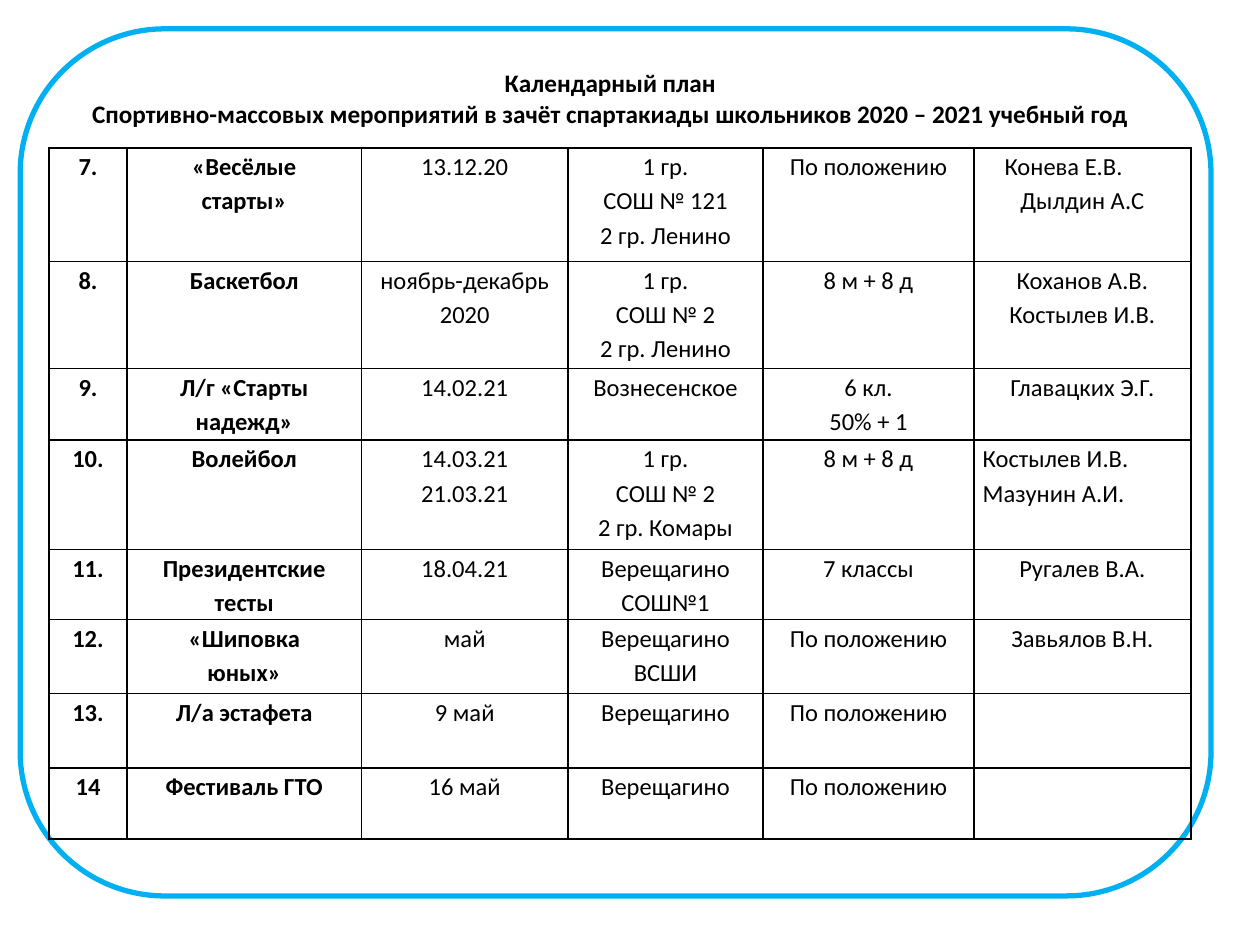
import pptx
import pptx.util
import pptx.dml.color
import pptx.enum.shapes
import pptx.enum.text
import pptx.oxml
import pptx.oxml.ns

Pt = pptx.util.Pt
RGB = pptx.dml.color.RGBColor.from_string
ALIGN = pptx.enum.text.PP_ALIGN
ANCHOR = pptx.enum.text.MSO_ANCHOR


class Theme:
    font = "Calibri"
    paper = "FFFFFF"
    ink = "000000"
    accent = "00B0F0"
    title_size = 14.4
    body_size = 14
    frame_width = 3
    border_width = 1
    line_spacing = 1.15


TITLE = ["Календарный план",
         "Спортивно-массовых мероприятий в зачёт спартакиады школьников "
         "2020 – 2021 учебный год"]
COLUMN_WIDTHS = [44.6, 134, 118, 111.5, 120.5, 124]
ROW_HEIGHTS = [65, 61, 41, 62.5, 40, 42.5, 42.5, 40.5]
BOLD_COLUMNS = (0, 1)
EVENTS = [
    ["7.", "«Весёлые\nстарты»", "13.12.20", "1 гр.\nСОШ № 121\n2 гр. Ленино",
     "По положению", "Конева Е.В.\nДылдин А.С"],
    ["8.", "Баскетбол", "ноябрь-декабрь\n2020", "1 гр.\nСОШ № 2\n2 гр. Ленино",
     "8 м + 8 д", "Коханов А.В.\nКостылев И.В."],
    ["9.", "Л/г «Старты\nнадежд»", "14.02.21", "Вознесенское",
     "6 кл.\n50% + 1", "Главацких Э.Г."],
    ["10.", "Волейбол", "14.03.21\n21.03.21", "1 гр.\nСОШ № 2\n2 гр. Комары",
     "8 м + 8 д", "Костылев И.В.\nМазунин А.И."],
    ["11.", "Президентские\nтесты", "18.04.21", "Верещагино\nСОШ№1",
     "7 классы", "Ругалев В.А."],
    ["12.", "«Шиповка\nюных»", "май", "Верещагино\nВСШИ",
     "По положению", "Завьялов В.Н."],
    ["13.", "Л/а эстафета", "9 май", "Верещагино", "По положению", ""],
    ["14", "Фестиваль ГТО", "16 май", "Верещагино", "По положению", ""],
]
# Left-aligned paragraphs: (row, column, paragraph) -> indent in points
LEFT_INDENTS = {(0, 5, 0): 12.5, (3, 5, 0): 0, (3, 5, 1): 0}


def set_attrs(obj, values):
    for name, value in values.items():
        setattr(obj, name, value)


def format_font(font, size, bold):
    set_attrs(font, {"name": Theme.font, "size": Pt(size), "bold": bold})
    font.color.rgb = RGB(Theme.ink)


def add_frame(slide, left, top, width, height):
    """Draw the rounded frame behind the title."""
    sp = slide.shapes.add_shape(
        pptx.enum.shapes.MSO_SHAPE.ROUNDED_RECTANGLE,
        Pt(left), Pt(top), Pt(width), Pt(height))
    sp.shadow.inherit = False
    sp.fill.solid()
    sp.fill.fore_color.rgb = RGB(Theme.paper)
    sp.line.color.rgb = RGB(Theme.accent)
    sp.line.width = Pt(Theme.frame_width)
    slide.shapes.title.element.addprevious(sp.element)


def place_title(slide, left, top, width, height):
    sp = slide.shapes.title
    set_attrs(sp, {"left": Pt(left), "top": Pt(top),
                   "width": Pt(width), "height": Pt(height)})
    tf = sp.text_frame
    set_attrs(tf, {"text": "\v".join(TITLE), "word_wrap": True,
                   "vertical_anchor": ANCHOR.MIDDLE,
                   "auto_size": pptx.enum.text.MSO_AUTO_SIZE.NONE})
    p = tf.paragraphs[0]
    set_attrs(p, {"alignment": ALIGN.CENTER, "line_spacing": 1.0})
    for r in p.runs:
        format_font(r.font, Theme.title_size, True)


def add_borders(cell):
    tc_pr = cell._tc.get_or_add_tcPr()
    for side in "LRTB":
        tc_pr.append(pptx.oxml.parse_xml(
            f'<a:ln{side} {pptx.oxml.ns.nsdecls("a")} w="{Pt(Theme.border_width)}">'
            f'<a:solidFill><a:srgbClr val="{Theme.ink}"/></a:solidFill>'
            f'</a:ln{side}>'))


def fill_cell(cell, text, row, column):
    set_attrs(cell, {"margin_left": Pt(5), "margin_right": Pt(5),
                     "margin_top": 0, "margin_bottom": 0,
                     "vertical_anchor": ANCHOR.TOP, "text": text})
    add_borders(cell)
    cell.fill.background()
    for i, p in enumerate(cell.text_frame.paragraphs):
        indent = LEFT_INDENTS.get((row, column, i))
        p.alignment = ALIGN.CENTER if indent is None else ALIGN.LEFT
        p.line_spacing = Theme.line_spacing
        if indent:
            p._p.get_or_add_pPr().set("marL", str(Pt(indent)))
        format_font(p.font, Theme.body_size, column in BOLD_COLUMNS)
        for r in p.runs:
            format_font(r.font, Theme.body_size, column in BOLD_COLUMNS)


def add_calendar(slide, left, top):
    table = slide.shapes.add_table(
        len(EVENTS), len(COLUMN_WIDTHS), Pt(left), Pt(top),
        Pt(sum(COLUMN_WIDTHS)), Pt(sum(ROW_HEIGHTS))).table
    set_attrs(table, {"first_row": False, "horz_banding": False})
    for column, width in zip(table.columns, COLUMN_WIDTHS):
        column.width = Pt(width)
    for row, height in zip(table.rows, ROW_HEIGHTS):
        row.height = Pt(height)
    for i, event in enumerate(EVENTS):
        for j, text in enumerate(event):
            fill_cell(table.cell(i, j), text, i, j)


def main():
    prs = pptx.Presentation()
    set_attrs(prs, {"slide_width": Pt(720), "slide_height": Pt(540)})
    slide = prs.slides.add_slide(prs.slide_layouts.get_by_name("Title Only"))
    add_frame(slide, 11.5, 16.5, 680.5, 495.5)
    place_title(slide, 39.5, 28, 618.5, 56)
    add_calendar(slide, 28, 84.5)
    prs.save("out.pptx")


if __name__ == "__main__":
    main()
